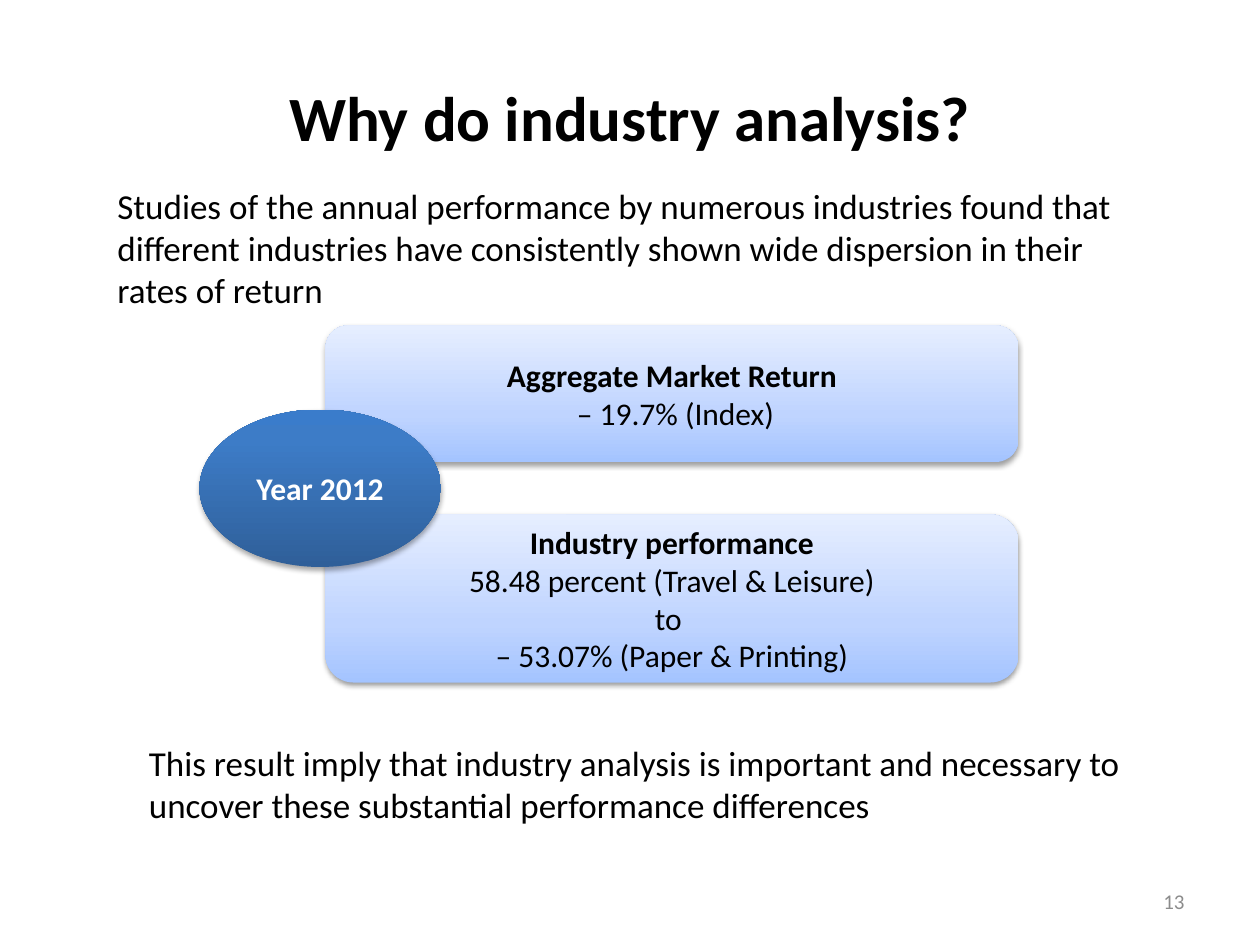
import copy

import lxml.etree
import pptx
import pptx.dml.color
import pptx.enum.shapes
import pptx.enum.text
import pptx.oxml.ns
import pptx.util

Pt = pptx.util.Pt
RGB = pptx.dml.color.RGBColor
SHAPE = pptx.enum.shapes.MSO_SHAPE
ANCHOR = pptx.enum.text.MSO_ANCHOR
ALIGN = pptx.enum.text.PP_ALIGN
qn = pptx.oxml.ns.qn

BLACK = RGB(0x00, 0x00, 0x00)
WHITE = RGB(0xFF, 0xFF, 0xFF)
GRAY = RGB(0x8C, 0x8C, 0x8C)
LIGHT_BLUES = [(0, RGB(0xA4, 0xC4, 0xFF)), (0.35, RGB(0xBF, 0xD4, 0xFF)),
               (1, RGB(0xE6, 0xEE, 0xFF))]
DARK_BLUES = [(0, RGB(0x2F, 0x5F, 0x99)), (0.8, RGB(0x3D, 0x7C, 0xC7)),
              (1, RGB(0x3A, 0x7C, 0xCB))]


def write(s, lines, size, color=BLACK, align=ALIGN.LEFT, anchor=ANCHOR.TOP):
    """Fill a shape with (text, bold) lines, one paragraph each."""
    tf = s.text_frame
    tf.word_wrap = True
    tf.vertical_anchor = anchor
    for i, (text, bold) in enumerate(lines):
        p = tf.paragraphs[0] if i == 0 else tf.add_paragraph()
        p.alignment = align
        r = p.add_run()
        r.text = text
        r.font.name = "Calibri"
        r.font.size = Pt(size)
        r.font.bold = bold
        r.font.color.rgb = color


def style(s, stops, alpha, dist):
    """Give a shape a vertical gradient, no line and a soft shadow below."""
    s.fill.gradient()
    s.fill.gradient_angle = 90
    gs_list = s._element.spPr.find(".//" + qn("a:gsLst"))
    gs_list.insert(1, copy.deepcopy(gs_list[0]))
    for gs, (position, color) in zip(s.fill.gradient_stops, stops):
        gs.position = position
        gs.color.rgb = color
    s.line.fill.background()
    s.shadow.inherit = False
    effects = s._element.spPr.find(qn("a:effectLst"))
    shadow = lxml.etree.SubElement(
        effects, qn("a:outerShdw"), blurRad=str(Pt(3.1)), dist=str(Pt(dist)),
        dir="5400000", rotWithShape="0")
    color = lxml.etree.SubElement(shadow, qn("a:srgbClr"), val=str(BLACK))
    lxml.etree.SubElement(color, qn("a:alpha"), val=str(alpha * 1000))


prs = pptx.Presentation()
prs.slide_width, prs.slide_height = Pt(720), Pt(540)
slide = prs.slides.add_slide(prs.slide_layouts[5])

# Title
s = slide.shapes.title
s.left, s.top, s.width, s.height = Pt(36), Pt(21.6), Pt(648), Pt(90)
write(s, [("Why do industry analysis?", True)], 36,
      align=ALIGN.CENTER, anchor=ANCHOR.MIDDLE)

# Introduction
s = slide.shapes.add_textbox(Pt(60), Pt(102), Pt(600), Pt(80))
write(s, [("Studies of the annual performance by numerous industries found that "
           "different industries have consistently shown wide dispersion in "
           "their rates of return", False)], 20)

# Return boxes
group = slide.shapes.add_group_shape()
boxes = [
    (186, 78, [("Aggregate Market Return", True),
               (" – 19.7% (Index)", False)]),
    (294, 96, [("Industry performance", True),
               (" 58.48 percent (Travel & Leisure) ", False),
               ("to ", False),
               ("– 53.07% (Paper & Printing)", False)]),
]
for top, height, lines in boxes:
    s = group.shapes.add_shape(SHAPE.ROUNDED_RECTANGLE,
                               Pt(186), Pt(top), Pt(396), Pt(height))
    style(s, LIGHT_BLUES, 38, 1.6)
    write(s, lines, 18, align=ALIGN.CENTER, anchor=ANCHOR.MIDDLE)

# Year
s = group.shapes.add_shape(SHAPE.OVAL, Pt(114), Pt(234), Pt(138), Pt(90))
style(s, DARK_BLUES, 35, 1.8)
write(s, [("Year 2012", True)], 18, WHITE, ALIGN.CENTER, ANCHOR.MIDDLE)

# Conclusion
s = group.shapes.add_textbox(Pt(78), Pt(420), Pt(570), Pt(55.7))
write(s, [("This result imply that industry analysis is important and necessary "
           "to uncover these substantial performance differences", False)], 20)

# Slide number
s = slide.shapes.add_textbox(Pt(516), Pt(500.5), Pt(168), Pt(28.75))
write(s, [("13", False)], 12, GRAY, ALIGN.RIGHT, ANCHOR.MIDDLE)

prs.save("out.pptx")
